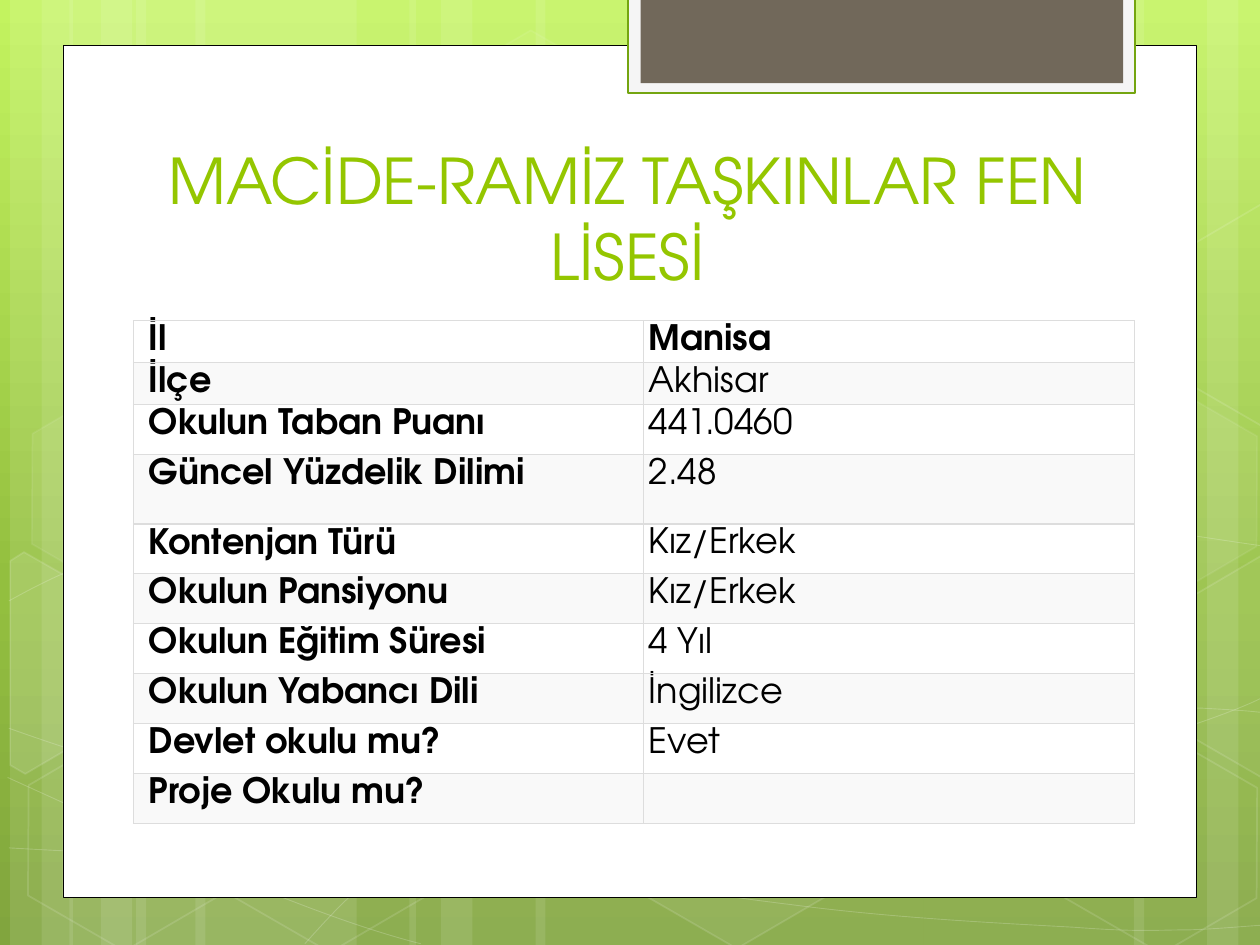
import copy
import math

import lxml.etree
import pptx
import pptx.dml.color
import pptx.enum.shapes
import pptx.enum.text
import pptx.oxml.ns
import pptx.util

RGBColor = pptx.dml.color.RGBColor
WHITE = RGBColor(0xFF, 0xFF, 0xFF)
BLACK = RGBColor(0x00, 0x00, 0x00)
LIME = RGBColor(0x94, 0xC6, 0x00)
TAB_FRAME = RGBColor(0xF5, 0xF5, 0xF5)
TAB_EDGE = RGBColor(0x74, 0xA5, 0x10)
TAB_FILL = RGBColor(0x71, 0x68, 0x5A)
ROW_FILLS = [WHITE, RGBColor(0xF9, 0xF9, 0xF9)]
BORDER = RGBColor(0xDD, 0xDD, 0xDD)
SKY = [(0, RGBColor(0xC3, 0xF3, 0x5F)), (0.62, RGBColor(0x93, 0xBF, 0x3F)),
       (1, RGBColor(0x81, 0xA5, 0x3E))]
FONT = "TeX Gyre Adventor"
RECTANGLE = pptx.enum.shapes.MSO_SHAPE.RECTANGLE
HEXAGON = pptx.enum.shapes.MSO_SHAPE.HEXAGON
qn = pptx.oxml.ns.qn

# The slide is a grid of 100 columns by 75 rows
CELL = pptx.util.Inches(0.1)
COLUMNS, ROWS = 100, 75
TILT = 30


def paint(shape, fill=None, line=None, width=1, fill_alpha=100, line_alpha=100):
    """Fill and outline a shape, with opacity in percent."""
    shape.shadow.inherit = False
    parts = [(shape.fill, fill, fill_alpha, ("a:solidFill", "a:srgbClr")),
             (shape.line.fill, line, line_alpha, ("a:ln", "a:solidFill", "a:srgbClr"))]
    for part, color, alpha, route in parts:
        if color is None:
            part.background()
            continue
        part.solid()
        part.fore_color.rgb = color
        if alpha < 100:
            node = shape.element.spPr.find("/".join(qn(tag) for tag in route))
            lxml.etree.SubElement(node, qn("a:alpha"), val=str(alpha * 1000))
    if line is not None:
        shape.line.width = pptx.util.Pt(width)


def outline(points, close):
    """Draw straight segments through points given in grid cells."""
    spots = [(x * CELL, y * CELL) for x, y in points]
    builder = page.shapes.build_freeform(*spots[0])
    builder.add_line_segments(spots[1:], close=close)
    return builder.convert_to_shape()


deck = pptx.Presentation()
deck.slide_width, deck.slide_height = COLUMNS * CELL, ROWS * CELL
page = deck.slides.add_slide(deck.slide_layouts[5])

# Green background gradient, top to bottom
sky = page.background.fill
sky.gradient()
sky.gradient_angle = 270
last_stop = page.element.findall(".//" + qn("a:gs"))[-1]
last_stop.addnext(copy.deepcopy(last_stop))
for stop, (position, color) in zip(sky.gradient_stops, SKY):
    stop.position = position
    stop.color.rgb = color

# Pale vertical bands: left, width
bands = [(10.8, 17.5), (0.8, 5), (3.3, 8.3), (15.5, 17.5), (5.5, 5), (8, 8.3),
         (73.3, 17.5), (95.8, 5), (90, 8.3), (42.5, 30.8), (32.5, 5), (35, 8.3)]
for left, width in bands:
    band = page.shapes.add_shape(RECTANGLE, int(left * CELL), 0, int(width * CELL), ROWS * CELL)
    paint(band, WHITE, fill_alpha=10)

# Thin waves: a start point, then two control points and an end per curve
waves = [
    [(0.7, 67.3), (6.1, 67.6), (11.5, 67.9), (19, 67.8), (26.5, 67.7), (35.8, 67.5),
     (45.8, 66.5), (55.8, 65.5), (70, 63.6), (79.2, 61.7), (88.3, 59.8), (97.7, 56.8),
     (100.7, 55.1)],
    [(0.7, 47.7), (3.6, 46.1), (6.5, 44.6), (12.1, 43.1), (17.8, 41.6), (25.9, 39.4),
     (34.7, 38.7), (43.6, 38), (54.4, 37.9), (65.4, 38.7), (76.4, 39.5), (94.7, 42.6),
     (100.7, 43.4)],
    [(0.6, 61.7), (12.7, 67.2), (24.7, 72.7), (33.4, 74.9)],
    [(0.7, 57.8), (3.8, 58.9), (7, 60), (12.8, 61.6), (18.6, 63.1), (27.3, 65.6),
     (35.7, 67.3), (44, 69), (54.5, 70.8), (62.8, 71.8), (71.1, 72.9), (80, 73.3),
     (85.3, 73.6), (90.5, 74), (91.9, 73.8), (94.5, 73.8), (97.1, 73.7), (98.9, 73.5),
     (100.7, 73.4)],
    [(24.2, 74.9), (26, 72.9), (27.8, 70.9), (30.2, 69.1), (32.6, 67.3), (36, 65.3),
     (38.8, 63.9), (41.6, 62.5), (43.3, 61.9), (47, 60.9), (50.6, 59.9), (57.3, 58.5),
     (60.8, 57.8), (64.4, 57.1), (64.9, 57.1), (68, 56.9), (71.1, 56.6), (76, 56.3),
     (79.4, 56.2), (82.9, 56.1), (88.6, 56.2), (88.6, 56.2), (90.8, 56.2), (93, 56.2),
     (95.3, 56.2), (97.1, 56.3), (98.8, 56.4), (99.7, 56.5), (100.6, 56.6), (100.3, 56.5),
     (100.6, 56.6)],
]
for points in waves:
    wave = outline(points[::3], False)
    # Bend each straight segment by putting its control points before its end
    for number, segment in enumerate(wave.element.findall(".//" + qn("a:lnTo"))):
        segment.tag = qn("a:cubicBezTo")
        for place, (x, y) in enumerate(points[3 * number + 1:3 * number + 3]):
            handle = lxml.etree.Element(qn("a:pt"), x=str(int(x * CELL - wave.left)),
                                        y=str(int(y * CELL - wave.top)))
            segment.insert(place, handle)
    paint(wave, line=WHITE, width=0.5, line_alpha=20)

# Hexagons: left, top, fill opacity, line opacity
hexagons = [(33.4, 3.6, 4, 8), (49.7, 58.9, 6, 12), (1.1, 59.1, 0, 12), (1.4, 31.2, 7, 8),
            (17.4, 59.2, 0, 12), (75.3, 45.3, 10, 12), (83.4, 59.3, 0, 12),
            (83.4, 31.4, 7, 8)]
for left, top, fill_alpha, line_alpha in hexagons:
    hexagon = page.shapes.add_shape(HEXAGON, int(left * CELL), int(top * CELL),
                                    int(17.5 * CELL), int(15.2 * CELL))
    hexagon.adjustments[0] = 0.285
    hexagon.rotation = TILT
    paint(hexagon, WHITE if fill_alpha else None, WHITE, 1, fill_alpha, line_alpha)

# Hexagons cut by the slide edge: turned back about their middle, then tilted
right_cut = [(92.6, 48.5), (100.1, 44.1), (100.9, 44.6), (100.9, 61.3), (100.2, 61.7),
             (92.6, 57.3)]
left_cut = [(0.8, 44.5), (1.9, 43.8), (9.6, 48.2), (9.5, 57), (2, 61.4), (0.8, 60.7)]
upper_cut = [(x, y - 27.9) for x, y in right_cut]
cosine, sine = math.cos(math.radians(TILT)), math.sin(math.radians(TILT))
for points, middle, fill_alpha in [(left_cut, (3.6, 53.5), 10), (right_cut, (98.5, 52), 4),
                                   (upper_cut, (98.5, 24.1), 0)]:
    offsets = [(x - middle[0], y - middle[1]) for x, y in points]
    upright = [(middle[0] + x * cosine + y * sine, middle[1] - x * sine + y * cosine)
               for x, y in offsets]
    cut = outline(upright, True)
    cut.rotation = TILT
    paint(cut, WHITE if fill_alpha else None, WHITE, 1, fill_alpha, 12)

# White sheet and the tab at its top
panels = [(5, 3.6, 90, 67.65, WHITE, BLACK, 0.5),
          (49.85, -0.2, 40.2, 7.6, TAB_FRAME, TAB_EDGE, 1.25),
          (50.85, -0.2, 38.3, 6.8, TAB_FILL, None, 0)]
for left, top, width, height, fill, line, weight in panels:
    panel = page.shapes.add_shape(RECTANGLE, int(left * CELL), int(top * CELL),
                                  int(width * CELL), int(height * CELL))
    paint(panel, fill, line, weight)

# Title, brought in front of the sheet
title = page.shapes.title
title.element.getparent().append(title.element)
title.left, title.top = int(11.4 * CELL), int(11.25 * CELL)
title.width, title.height = int(76.8 * CELL), int(12.5 * CELL)
frame = title.text_frame
frame.text = "MACİDE-RAMİZ TAŞKINLAR FEN LİSESİ"
frame.word_wrap = True
frame.auto_size = pptx.enum.text.MSO_AUTO_SIZE.NONE
frame.vertical_anchor = pptx.enum.text.MSO_ANCHOR.BOTTOM
frame.paragraphs[0].alignment = pptx.enum.text.PP_ALIGN.CENTER
span = frame.paragraphs[0].runs[0]
span.font.name, span.font.size = FONT, pptx.util.Pt(36)
span.font.color.rgb = LIME

# School facts: label, value, row height
facts = [("İl", "Manisa", 3.33), ("İlçe", "Akhisar", 3.33),
         ("Okulun Taban Puanı", "441.0460", 3.96), ("Güncel Yüzdelik Dilimi", "2.48", 5.53),
         ("Kontenjan Türü", "Kız/Erkek", 3.96), ("Okulun Pansiyonu", "Kız/Erkek", 3.96),
         ("Okulun Eğitim Süresi", "4 Yıl", 3.96), ("Okulun Yabancı Dili", "İngilizce", 3.96),
         ("Devlet okulu mu?", "Evet", 3.96), ("Proje Okulu mu?", "", 3.96)]
table = page.shapes.add_table(len(facts), 2, int(10.6 * CELL), int(25.45 * CELL),
                              int(79.4 * CELL), int(39.91 * CELL)).table
table.first_row = table.horz_banding = False
for column, width in zip(table.columns, (40.5, 38.95)):
    column.width = int(width * CELL)
for row, (label, value, height) in enumerate(facts):
    table.rows[row].height = int(height * CELL)
    for column, words in enumerate((label, value)):
        box = table.cell(row, column)
        box.margin_left = int((1.2, 0.4)[column] * CELL)
        box.margin_right = box.margin_top = box.margin_bottom = int(0.4 * CELL)
        para = box.text_frame.paragraphs[0]
        para.text = words
        para.line_spacing = pptx.util.Pt(18)
        for span in para.runs:
            span.font.name, span.font.size = FONT, pptx.util.Pt(20)
            span.font.bold = column == 0 or row == 0
            span.font.color.rgb = BLACK
        box.fill.solid()
        box.fill.fore_color.rgb = ROW_FILLS[row % 2]
        properties = box._tc.get_or_add_tcPr()
        for place, side in enumerate(("a:lnL", "a:lnR", "a:lnT", "a:lnB")):
            edge = lxml.etree.Element(qn(side), w=str(pptx.util.Pt(0.75)))
            solid = lxml.etree.SubElement(edge, qn("a:solidFill"))
            lxml.etree.SubElement(solid, qn("a:srgbClr"), val=str(BORDER))
            properties.insert(place, edge)

deck.save("out.pptx")
